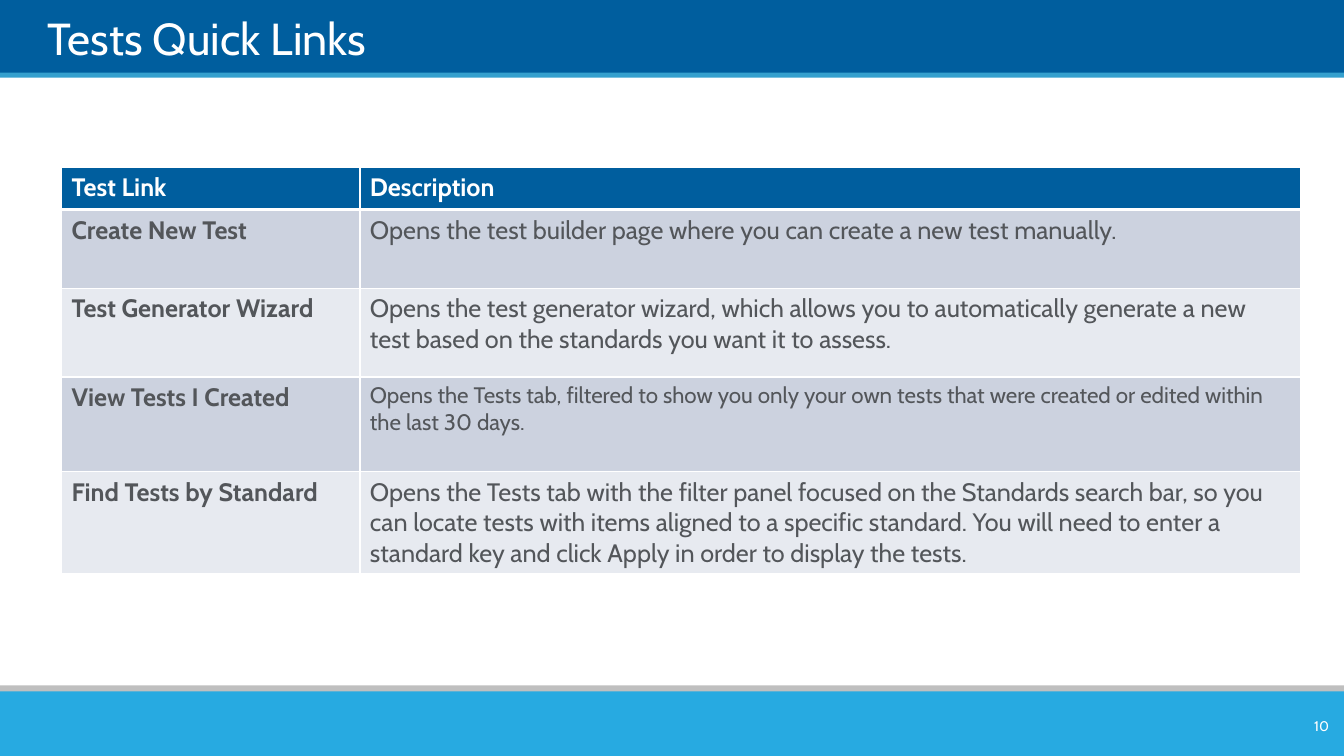
from lxml import etree
from pptx import Presentation
from pptx import util as u
from pptx.dml.color import RGBColor
from pptx.enum import shapes, text
from pptx.oxml import ns

WIDTH, HEIGHT = 13.33, 7.5
FONT = "Cabin"
NAVY, WHITE, GREY = "005E9E", "FFFFFF", "53565A"
BANDS = ["CCD2DF", "E7EAF0"]

COLUMNS = [2.96, 9.33]
ROWS = [0.42, 0.78, 0.88, 0.94, 1.01]
LINKS = [
    ("Test Link", "Description", 18),
    ("Create New Test",
     "Opens the test builder page where you can create a new test manually.", 18),
    ("Test Generator Wizard",
     "Opens the test generator wizard, which allows you to automatically generate "
     "a new test based on the standards you want it to assess.", 18),
    ("View Tests I Created",
     "Opens the Tests tab, filtered to show you only your own tests that were "
     "created or edited within the last 30 days.", 16),
    ("Find Tests by Standard",
     "Opens the Tests tab with the filter panel focused on the Standards search "
     "bar, so you can locate tests with items aligned to a specific standard. You "
     "will need to enter a standard key and click Apply in order to display the "
     "tests.", 18),
]


def paint(color_format, hex_color):
    color_format.rgb = RGBColor.from_string(hex_color)


def fill(target, hex_color):
    target.fill.solid()
    paint(target.fill.fore_color, hex_color)


def write(frame, words, size, color, bold=False):
    frame.text = words
    font = frame.paragraphs[0].runs[0].font
    font.name, font.size, font.bold = FONT, u.Pt(size), bold
    paint(font.color, color)


def add_bar(slide, left, top, width, height, color):
    bar = slide.shapes.add_shape(
        shapes.MSO_SHAPE.RECTANGLE,
        u.Inches(left), u.Inches(top), u.Inches(width), u.Inches(height))
    bar.shadow.inherit = False
    fill(bar, color)
    bar.line.fill.background()


def add_header(slide, left, top, width, height):
    # Navy band with a light blue rule along its lower edge
    rule = 0.05
    add_bar(slide, left, top, width, height - rule + 0.02, NAVY)
    add_bar(slide, left, top + height - rule, width, rule, "35A0CE")

    # Title, brought in front of the band
    title = slide.shapes.title
    slide.shapes._spTree.append(title._element)
    title.left, title.top = u.Inches(left + 0.47), u.Inches(top + 0.08)
    title.width, title.height = u.Inches(width - 0.9), u.Inches(0.57)
    frame = title.text_frame
    frame.margin_left = frame.margin_right = 0
    frame.margin_top = frame.margin_bottom = 0
    frame.auto_size = text.MSO_AUTO_SIZE.NONE
    frame.vertical_anchor = text.MSO_ANCHOR.BOTTOM
    write(frame, "Tests Quick Links", 32, WHITE)
    frame.paragraphs[0].alignment = text.PP_ALIGN.LEFT


def add_footer(slide, left, top, width, height):
    # Grey rule above the blue band
    rule = 0.06
    add_bar(slide, left, top, width, 0.14, "BFBFBF")
    add_bar(slide, left, top + rule, width, height - rule, "27AAE1")

    # Page number
    number = slide.shapes.add_textbox(
        u.Inches(left + width - 0.82), u.Inches(top + 0.25),
        u.Inches(0.77), u.Inches(0.3))
    frame = number.text_frame
    frame.word_wrap = True
    frame.vertical_anchor = text.MSO_ANCHOR.MIDDLE
    write(frame, "10", 10, WHITE)
    frame.paragraphs[0].alignment = text.PP_ALIGN.RIGHT


def add_borders(cell, top, bottom):
    properties = cell._tc.get_or_add_tcPr()
    for side, points in (("L", 1), ("R", 1), ("T", top), ("B", bottom)):
        line = etree.SubElement(properties, ns.qn(f"a:ln{side}"),
                                w=str(u.Pt(points)))
        solid = etree.SubElement(line, ns.qn("a:solidFill"))
        etree.SubElement(solid, ns.qn("a:srgbClr"), val=WHITE)


def add_links_table(slide, left, top):
    table = slide.shapes.add_table(
        len(ROWS), len(COLUMNS), u.Inches(left), u.Inches(top),
        u.Inches(sum(COLUMNS)), u.Inches(sum(ROWS))).table
    for column, width in zip(table.columns, COLUMNS):
        column.width = u.Inches(width)

    for r, (link, description, size) in enumerate(LINKS):
        table.rows[r].height = u.Inches(ROWS[r])
        heading = r == 0
        for c, words in enumerate((link, description)):
            cell = table.cell(r, c)
            # The heading row is closed by a thicker line
            add_borders(cell, 3 if r == 1 else 1, 3 if heading else 1)
            fill(cell, NAVY if heading else BANDS[(r - 1) % 2])
            write(cell.text_frame, words, size if c else 18,
                  WHITE if heading else GREY, bold=heading or c == 0)


def main():
    deck = Presentation()
    deck.slide_width, deck.slide_height = u.Inches(WIDTH), u.Inches(HEIGHT)
    slide = deck.slides.add_slide(deck.slide_layouts.get_by_name("Title Only"))
    add_header(slide, 0, -0.01, WIDTH, 0.78)
    add_footer(slide, 0, 6.8, WIDTH, HEIGHT - 6.8)
    add_links_table(slide, 0.61, 1.66)
    deck.save("out.pptx")


if __name__ == "__main__":
    main()
